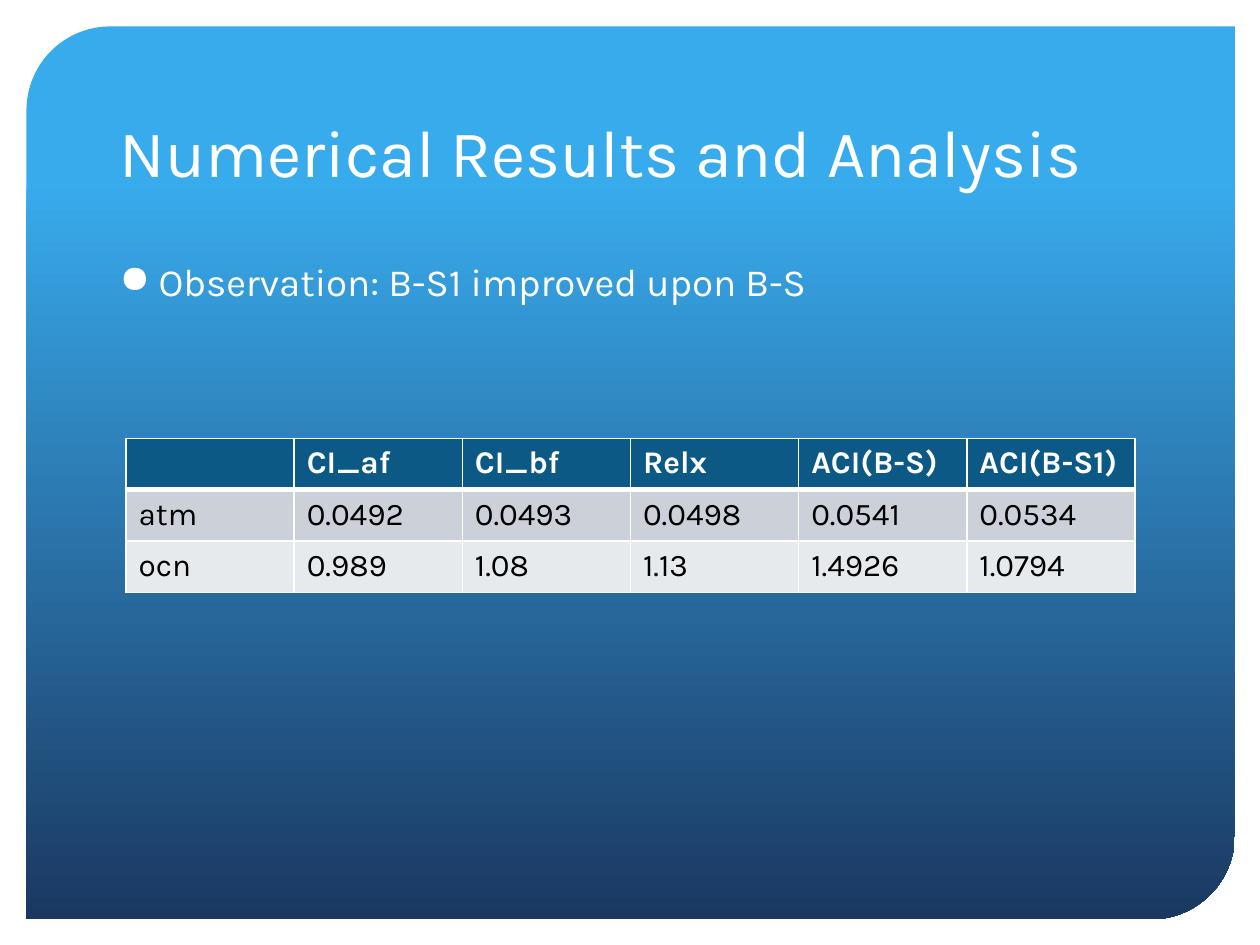
from dataclasses import dataclass

from lxml.etree import SubElement
from pptx import Presentation
from pptx.dml.color import RGBColor as Color
from pptx.enum.shapes import MSO_SHAPE as Shape
from pptx.enum.text import MSO_ANCHOR as Anchor
from pptx.oxml import parse_xml
from pptx.oxml.ns import nsdecls, qn
from pptx.util import Inches, Pt


@dataclass(frozen=True)
class Theme:
    """Colours, font and type sizes of the deck."""
    font: str = "Karla"
    light: str = "FFFFFF"
    dark: str = "000000"
    sky: str = "38ABED"
    navy: str = "1B3861"
    header: str = "0C5986"
    bands: tuple = ("CCD1D9", "E7EAED")
    title: int = 38
    body: int = 22
    cell: int = 18
    thin: int = 1
    thick: int = 3


class SlideBuilder:
    """Draws styled elements on one page, placed by shares of its size."""

    def __init__(self, deck, theme):
        self.deck = deck
        self.theme = theme
        self.page = deck.slides.add_slide(deck.slide_layouts[6])

    def place(self, left, top, width, height):
        across, down = self.deck.slide_width, self.deck.slide_height
        return [round(share * size) for share, size in
                zip((left, top, width, height), (across, down) * 2)]

    def add_span(self, para, text, size, color, bold=False):
        span = para.add_run()
        span.text = text
        span.font.name = self.theme.font
        span.font.size = Pt(size)
        span.font.bold = bold
        span.font.color.rgb = Color.from_string(color)

    def panel(self, area, rounding):
        panel = self.page.shapes.add_shape(Shape.ROUND_2_DIAG_RECTANGLE, *self.place(*area))
        panel.shadow.inherit = False
        panel.line.fill.background()
        panel.adjustments[0] = rounding
        panel.adjustments[1] = 0
        panel.fill.gradient()
        panel.fill.gradient_angle = 270
        stops = ((0.17, self.theme.sky), (1, self.theme.navy))
        for stop, (position, color) in zip(panel.fill.gradient_stops, stops):
            stop.position = position
            stop.color.rgb = Color.from_string(color)

    def text(self, area, text, size, anchor=Anchor.TOP, bullet=None):
        box = self.page.shapes.add_textbox(*self.place(*area))
        frame = box.text_frame
        frame.word_wrap = True
        frame.vertical_anchor = anchor
        para = frame.paragraphs[0]
        if bullet:
            properties = para._p.get_or_add_pPr()
            indent = Inches(0.31)
            properties.set("marL", str(indent))
            properties.set("indent", str(-indent))
            SubElement(properties, qn("a:buChar"), char=bullet)
        self.add_span(para, text, size, self.theme.light)

    def borders(self, cell, top, bottom):
        thin = self.theme.thin
        properties = cell._tc.get_or_add_tcPr()
        sides = (("L", thin), ("R", thin), ("T", top), ("B", bottom))
        for index, (side, width) in enumerate(sides):
            properties.insert(index, parse_xml(
                f'<a:ln{side} {nsdecls("a")} w="{Pt(width)}"><a:solidFill>'
                f'<a:srgbClr val="{self.theme.light}"/></a:solidFill></a:ln{side}>'))

    def table(self, area, rows):
        theme = self.theme
        table = self.page.shapes.add_table(len(rows), len(rows[0]), *self.place(*area)).table
        for row, values in enumerate(rows):
            is_header = row == 0
            fill = theme.header if is_header else theme.bands[(row - 1) % 2]
            color = theme.light if is_header else theme.dark
            top = theme.thick if row == 1 else theme.thin
            bottom = theme.thick if is_header else theme.thin
            for column, value in enumerate(values):
                cell = table.cell(row, column)
                cell.fill.solid()
                cell.fill.fore_color.rgb = Color.from_string(fill)
                self.borders(cell, top, bottom)
                if value:
                    self.add_span(cell.text_frame.paragraphs[0], value, theme.cell, color, is_header)


def main():
    deck = Presentation()
    deck.slide_width, deck.slide_height = Inches(10), Inches(7.5)
    theme = Theme()
    slide = SlideBuilder(deck, theme)
    slide.panel((0.021, 0.028, 0.959, 0.945), rounding=0.094)
    slide.text((0.085, 0.056, 0.829, 0.152), "Numerical Results and Analysis",
               theme.title, Anchor.BOTTOM)
    slide.text((0.085, 0.267, 0.829, 0.613), "Observation: B-S1 improved upon B-S",
               theme.body, bullet="●")
    slide.table((0.1, 0.464, 0.801, 0.163), (
        ("", "CI_af", "CI_bf", "Relx", "ACI(B-S)", "ACI(B-S1)"),
        ("atm", "0.0492", "0.0493", "0.0498", "0.0541", "0.0534"),
        ("ocn", "0.989", "1.08", "1.13", "1.4926", "1.0794"),
    ))
    deck.save("out.pptx")


if __name__ == "__main__":
    main()
